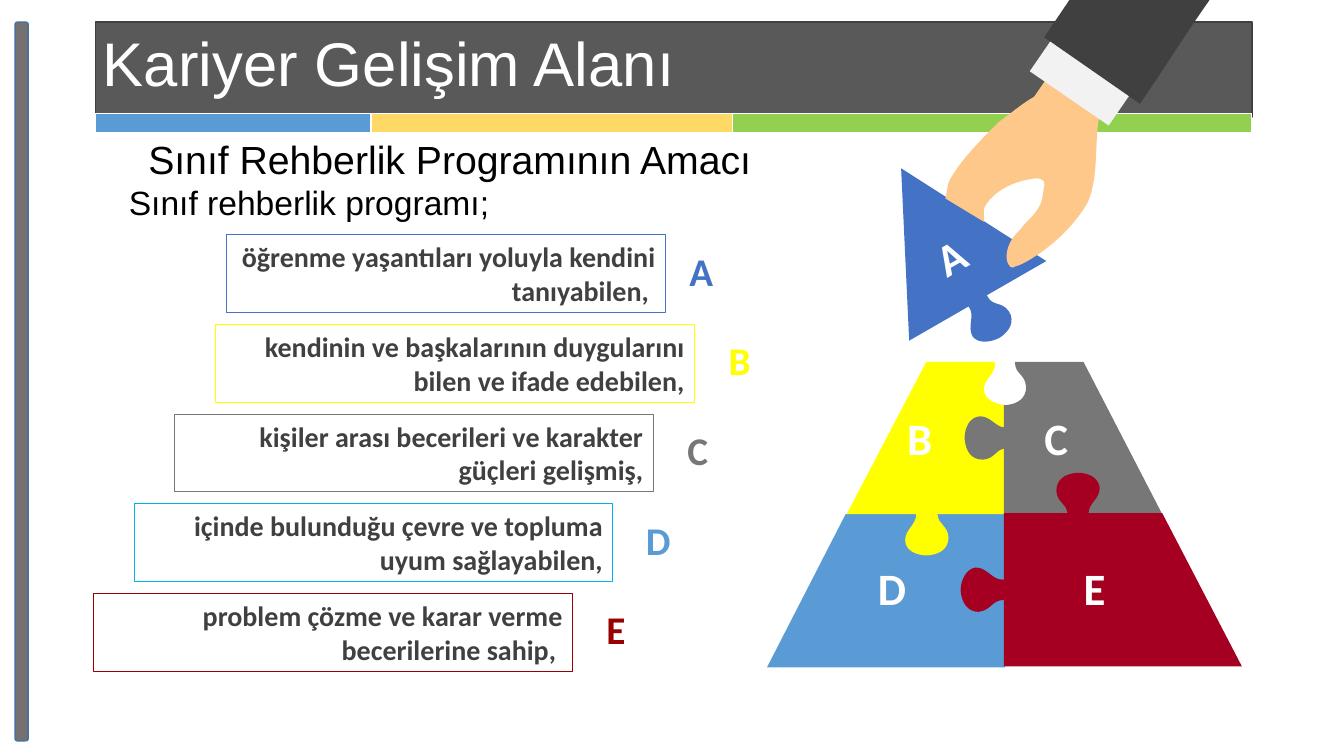
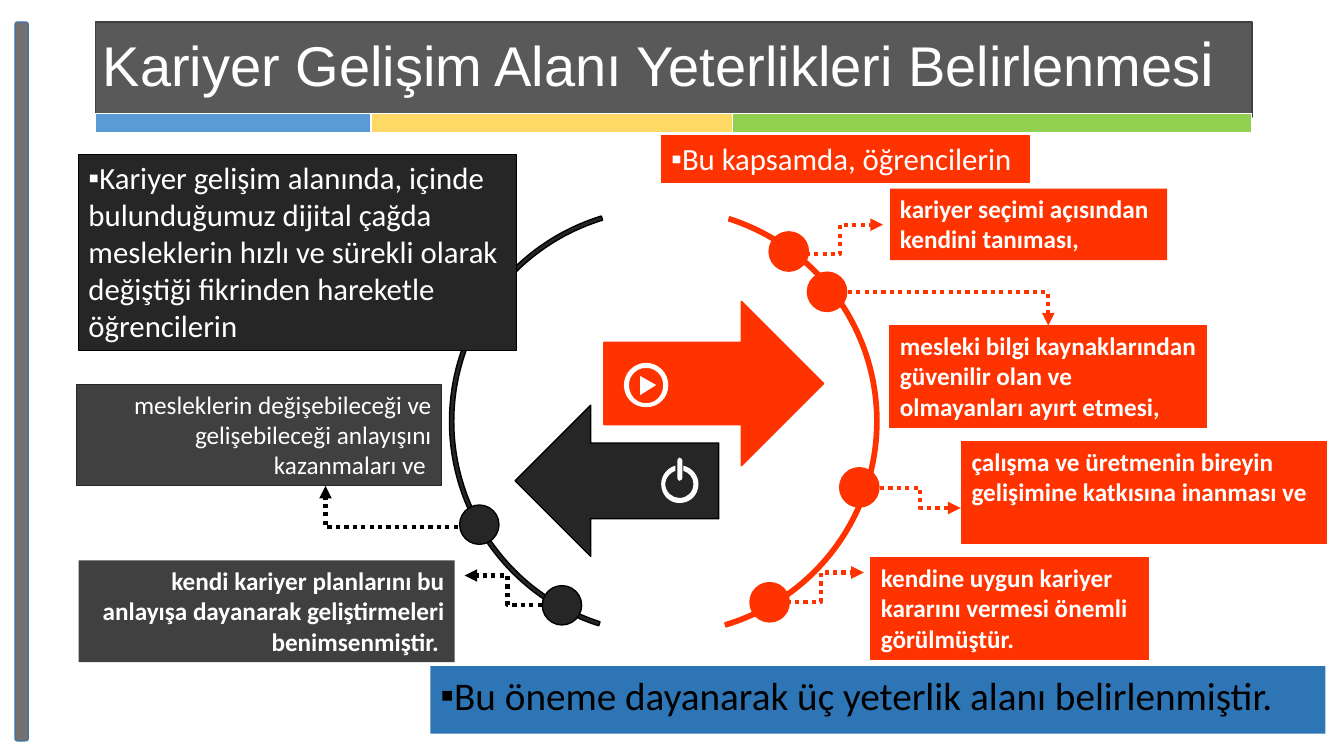
"""Builds two slides on the career development area of a guidance programme."""
from lxml import etree
from pptx import Presentation
from pptx import util as u
from pptx.dml.color import RGBColor
from pptx.enum import dml, shapes, text
from pptx.oxml import ns

WHITE = RGBColor(0xFF, 0xFF, 0xFF)
BLACK = RGBColor(0x00, 0x00, 0x00)
BAND = RGBColor(0x59, 0x59, 0x59)
DARK = RGBColor(0x40, 0x40, 0x40)
INK = RGBColor(0x26, 0x26, 0x26)
SIDEBAR = RGBColor(0x76, 0x71, 0x71)
SIDEBAR_EDGE = RGBColor(0x43, 0x73, 0x9E)
SKY = RGBColor(0x5B, 0x9B, 0xD5)
SAND = RGBColor(0xFF, 0xD9, 0x66)
GREEN = RGBColor(0x92, 0xD0, 0x50)
BLUE = RGBColor(0x44, 0x72, 0xC4)
YELLOW = RGBColor(0xFF, 0xFF, 0x00)
GREY = RGBColor(0x77, 0x77, 0x77)
CYAN = RGBColor(0x00, 0xB0, 0xF0)
MAROON = RGBColor(0x99, 0x00, 0x00)
CRIMSON = RGBColor(0xA5, 0x00, 0x21)
SKIN = RGBColor(0xFE, 0xC8, 0x8A)
CUFF = RGBColor(0xF2, 0xF2, 0xF2)
ORANGE = RGBColor(0xFF, 0x33, 0x00)
OCEAN = RGBColor(0x2E, 0x75, 0xB6)

SHAPE = shapes.MSO_SHAPE
LEFT, CENTER, RIGHT = text.PP_ALIGN.LEFT, text.PP_ALIGN.CENTER, text.PP_ALIGN.RIGHT

STRIPES = [(2.73, SKY), (3.59, SAND), (5.15, GREEN)]

PURPOSES = [
    ("A", "öğrenme yaşantıları yoluyla kendini tanıyabilen, ", 2.25, 4.35, 6.74, BLUE, BLUE),
    ("B", "kendinin ve başkalarının duygularını bilen ve ifade edebilen,", 2.14, 4.75, 7.13, YELLOW, YELLOW),
    ("C", "kişiler arası becerileri ve karakter güçleri gelişmiş,", 1.73, 4.75, 6.72, GREY, GREY),
    ("D", "içinde bulunduğu çevre ve topluma uyum sağlayabilen,", 1.33, 4.75, 6.31, SKY, CYAN),
    ("E", "problem çözme ve karar verme becerilerine sahip, ", 0.93, 4.75, 5.91, MAROON, MAROON),
]

PIECES = [
    (SKY, [(8.39, 5.1), (9.97, 5.1), (9.97, 6.62), (7.61, 6.62)]),
    (BLUE, [(8.94, 1.67), (10.38, 2.59), (9.79, 2.93), (9.85, 3.05, 9.93, 2.98, 10.01, 3.09),
            (10.07, 3.19, 10.02, 3.28, 9.92, 3.35), (9.82, 3.4, 9.71, 3.41, 9.65, 3.34),
            (9.59, 3.23, 9.68, 3.14, 9.61, 3.04), (9.02, 3.38)]),
    (YELLOW, [(9.19, 3.59), (9.87, 3.59), (9.89, 3.71, 9.76, 3.75, 9.76, 3.87),
              (9.77, 3.96, 9.87, 4.01, 9.98, 4.02), (9.98, 5.1), (9.3, 5.1),
              (9.31, 5.21, 9.4, 5.21, 9.41, 5.33), (9.41, 5.44, 9.33, 5.5, 9.2, 5.51),
              (9.09, 5.51, 8.98, 5.46, 8.98, 5.36), (8.98, 5.25, 9.09, 5.21, 9.09, 5.1), (8.4, 5.1)]),
    (GREY, [(10.07, 3.59), (10.75, 3.59), (11.53, 5.1), (9.96, 5.1), (9.96, 4.45),
            (9.87, 4.47, 9.87, 4.55, 9.75, 4.56), (9.64, 4.56, 9.58, 4.48, 9.57, 4.35),
            (9.57, 4.24, 9.62, 4.14, 9.72, 4.13), (9.83, 4.13, 9.87, 4.23, 9.96, 4.24), (9.96, 4.02),
            (9.97, 4.02), (10.1, 4.01, 10.18, 3.95, 10.18, 3.84), (10.17, 3.7, 10.07, 3.72, 10.07, 3.59)]),
    (CRIMSON, [(10.69, 4.69), (10.8, 4.69, 10.9, 4.74, 10.91, 4.84),
               (10.91, 4.95, 10.8, 4.99, 10.8, 5.09), (11.53, 5.09), (12.32, 6.61), (9.96, 6.61),
               (9.96, 5.95), (9.83, 5.96, 9.84, 6.05, 9.71, 6.07), (9.6, 6.07, 9.54, 5.98, 9.53, 5.86),
               (9.53, 5.75, 9.59, 5.64, 9.68, 5.63), (9.8, 5.63, 9.84, 5.76, 9.96, 5.75),
               (9.96, 5.09), (10.59, 5.09), (10.58, 4.99, 10.49, 4.99, 10.48, 4.87),
               (10.48, 4.76, 10.56, 4.7, 10.69, 4.69)]),
]
PIECE_LETTERS = [("A", 9.2, 2.23, 0.47, 330.4), ("B", 8.9, 4.03, 0.45, 0), ("C", 10.26, 4.03, 0.44, 0),
                 ("D", 8.61, 5.51, 0.48, 0), ("E", 10.65, 5.51, 0.42, 0)]
HAND = [(10.61, 0.45), (11.29, 0.7), (11.07, 0.91, 10.96, 0.97, 10.9, 1.19),
        (10.86, 1.42, 10.9, 1.77, 10.79, 2.01), (10.56, 2.41, 10.13, 2.64, 10.08, 2.64),
        (10, 2.72, 9.9, 2.48, 10.12, 2.28), (10.19, 2.18, 10.31, 2.11, 10.34, 1.97),
        (10.35, 1.85, 10.4, 1.79, 10.3, 1.77), (10.2, 1.77, 9.88, 1.83, 9.76, 2.07),
        (9.76, 2.11, 9.76, 2.16, 9.76, 2.2), (9.38, 1.97), (9.39, 1.91, 9.4, 1.86, 9.41, 1.81),
        (9.52, 1.59, 9.77, 1.35, 9.91, 1.21), (10.1, 1.07, 10.14, 1.03, 10.26, 0.96)]
SLEEVE = [(10.61, 0), (12, 0), (11.7, 0.43, 11.61, 0.59, 11.31, 1.03), (10.36, 0.37)]

POWER_ICON = [
    [(6.7, 4.62), (6.7, 4.67), (6.65, 4.69, 6.6, 4.74, 6.6, 4.8),
     (6.6, 4.88, 6.67, 4.94, 6.74, 4.94), (6.82, 4.94, 6.88, 4.88, 6.88, 4.8),
     (6.88, 4.74, 6.84, 4.69, 6.78, 4.67), (6.78, 4.62), (6.87, 4.64, 6.93, 4.72, 6.93, 4.8),
     (6.93, 4.91, 6.85, 4.99, 6.74, 4.99), (6.64, 4.99, 6.56, 4.91, 6.56, 4.8),
     (6.56, 4.72, 6.62, 4.64, 6.7, 4.62)],
    [(6.74, 4.54), (6.76, 4.54, 6.77, 4.56, 6.77, 4.57), (6.77, 4.74),
     (6.77, 4.75, 6.76, 4.77, 6.74, 4.77), (6.73, 4.77, 6.72, 4.75, 6.72, 4.74), (6.72, 4.57),
     (6.72, 4.56, 6.73, 4.54, 6.74, 4.54)],
]
PLAY_ICON = [
    [(6.35, 3.73), (6.51, 3.82), (6.35, 3.92)],
    [(6.41, 3.65), (6.31, 3.65, 6.24, 3.73, 6.24, 3.82), (6.24, 3.92, 6.31, 4, 6.41, 4),
     (6.51, 4, 6.58, 3.92, 6.58, 3.82), (6.58, 3.73, 6.51, 3.65, 6.41, 3.65)],
    [(6.41, 3.6), (6.53, 3.6, 6.63, 3.7, 6.63, 3.82), (6.63, 3.95, 6.53, 4.04, 6.41, 4.04),
     (6.29, 4.04, 6.19, 3.95, 6.19, 3.82), (6.19, 3.7, 6.29, 3.6, 6.41, 3.6)],
]

NOTES = [
    ("kariyer seçimi açısından kendini tanıması,", (8.83, 1.87, 2.75, 0.71), ORANGE, None, LEFT, True),
    ("mesleki bilgi kaynaklarından güvenilir olan ve olmayanları ayırt etmesi,",
     (8.83, 3.23, 3.14, 1.01), ORANGE, ORANGE, LEFT, True),
    ("kendine uygun kariyer kararını vermesi önemli görülmüştür.",
     (8.64, 5.53, 2.75, 1.01), ORANGE, ORANGE, LEFT, True),
    ("çalışma ve üretmenin bireyin gelişimine katkısına inanması ve",
     (9.54, 4.38, 3.62, 1.01), ORANGE, ORANGE, LEFT, True),
    ("mesleklerin değişebileceği ve gelişebileceği anlayışını kazanmaları ve ",
     (0.76, 3.81, 3.62, 1.01), DARK, INK, RIGHT, False),
    ("kendi kariyer planlarını bu anlayışa dayanarak geliştirmeleri benimsenmiştir. ",
     (0.78, 5.56, 3.73, 1.01), DARK, None, RIGHT, True),
]
ELBOWS = [
    ((5.46, 6), (4.61, 5.71), BLACK, False), ((8.41, 2.9), (10.4, 3.23), ORANGE, True),
    ((4.71, 5.23), (3.23, 4.82), BLACK, True), ((7.72, 5.97), (8.57, 5.68), ORANGE, False),
    ((7.91, 2.52), (8.76, 2.23), ORANGE, False), ((8.73, 4.84), (9.53, 5.04), ORANGE, False),
]
DOTS = [(7.63, 2.3, ORANGE, ORANGE), (8.01, 2.7, ORANGE, ORANGE), (7.44, 5.78, ORANGE, ORANGE),
        (8.33, 4.64, ORANGE, ORANGE), (5.38, 5.81, INK, BLACK), (4.56, 5.01, INK, BLACK)]
STATEMENTS = [
    ("Kariyer gelişim alanında, içinde bulunduğumuz dijital çağda mesleklerin hızlı ve sürekli olarak "
     "değiştiği fikrinden hareketle öğrencilerin", (0.78, 1.53, 4.34, 1.95), INK, BLACK, 22, WHITE),
    ("Bu kapsamda, öğrencilerin", (6.56, 1.34, 3.65, 0.47), ORANGE, ORANGE, 22, WHITE),
    ("Bu öneme dayanarak üç yeterlik alanı belirlenmiştir.", (4.27, 6.61, 8.88, 0.67), OCEAN, None, 28, BLACK),
]


def inches(values):
    """Converts a run of numbers to lengths."""
    return [u.Inches(value) for value in values]


def add_node(parent, tag, **attributes):
    """Appends one drawing element with its attributes."""
    node = etree.SubElement(parent, ns.qn(tag))
    for name, value in attributes.items():
        node.set(name, value)
    return node


def paint(shape, fill, line=None, width=1):
    """Sets fill and outline and removes the shadow."""
    shape.shadow.inherit = False
    if fill is None:
        shape.fill.background()
    else:
        shape.fill.solid()
        shape.fill.fore_color.rgb = fill
    if line is None:
        shape.line.fill.background()
    else:
        shape.line.color.rgb = line
        shape.line.width = u.Pt(width)
    return shape


def add_preset(page, kind, frame, fill, line=None, width=1, rotation=0, adjust=()):
    """Adds a preset shape."""
    shape = paint(page.shapes.add_shape(kind, *inches(frame)), fill, line, width)
    shape.rotation = rotation
    for index, value in enumerate(adjust):
        shape.adjustments[index] = value
    return shape


def add_run(para, words, size, color, bold=False, font="Calibri"):
    """Adds one formatted run."""
    span = para.add_run()
    span.text = words
    span.font.size = u.Pt(size)
    span.font.color.rgb = color
    span.font.bold = bold
    span.font.name = font


def open_frame(box, align=LEFT):
    """Prepares a wrapping, top-anchored frame and returns its first paragraph."""
    frame = box.text_frame
    frame.word_wrap = True
    frame.vertical_anchor = text.MSO_ANCHOR.TOP
    para = frame.paragraphs[0]
    para.alignment = align
    return para


def add_letter(page, letter, frame, size, color, rotation=0):
    """Adds a bold letter in a text box."""
    box = page.shapes.add_textbox(*inches(frame))
    box.rotation = rotation
    add_run(open_frame(box, CENTER), letter, size, color, True)


def add_panel(page, words, frame, fill, line, size, color, align=LEFT, bold=False, bullet=False):
    """Adds a rectangle holding one paragraph."""
    box = add_preset(page, SHAPE.RECTANGLE, frame, fill, line, 0.75)
    para = open_frame(box, align)
    if bullet:
        properties = para._p.get_or_add_pPr()
        add_node(properties, "a:buFont", typeface="Arial")
        add_node(properties, "a:buChar", char="▪")
    add_run(para, words, size, color, bold)


def add_outline(page, fill, *contours):
    """Adds a freeform whose six-number steps are cubic curves."""
    builder = page.shapes.build_freeform(*inches(contours[0][0]))
    for index, contour in enumerate(contours):
        if index:
            builder.move_to(*inches(contour[0]))
        points = [inches(step[at:at + 2]) for step in contour[1:] for at in range(0, len(step), 2)]
        builder.add_line_segments(points, close=True)
    shape = paint(builder.convert_to_shape(), fill)
    lines = iter(list(shape._element.iter(ns.qn("a:lnTo"))))
    for step in (step for contour in contours for step in contour[1:]):
        first, *others = [next(lines) for _ in range(len(step) // 2)]
        if others:
            first.tag = ns.qn("a:cubicBezTo")
        for other in others:
            first.append(other[0])
            other.getparent().remove(other)


def add_elbow(page, start, end, color, single_bend):
    """Adds a dotted elbow arrow with one or two bends."""
    arrow = page.shapes.add_connector(shapes.MSO_CONNECTOR.ELBOW, *inches(start + end))
    arrow.line.color.rgb = color
    arrow.line.width = u.Pt(3)
    arrow.line.dash_style = dml.MSO_LINE.ROUND_DOT
    properties = arrow._element.spPr
    if single_bend:
        properties.find(ns.qn("a:prstGeom")).set("prst", "bentConnector2")
    add_node(properties.find(ns.qn("a:ln")), "a:tailEnd", type="triangle")
    add_node(properties, "a:effectLst")


def add_stripes(page):
    """Adds the three-coloured strip under the title band."""
    total = sum(width for width, _ in STRIPES)
    table = page.shapes.add_table(1, len(STRIPES), *inches((0.95, 1.13, total, 0.2))).table
    table.first_row = table.horz_banding = False
    table.rows[0].height = u.Inches(0.2)
    for index, (width, color) in enumerate(STRIPES):
        table.columns[index].width = u.Inches(width)
        cell = table.cell(0, index)
        cell.margin_top = cell.margin_bottom = 0
        cell.text_frame.paragraphs[0]._p.get_or_add_endParaRPr().set("sz", "800")
        for side, points in (("L", 1), ("R", 1), ("T", 1), ("B", 3)):
            border = add_node(cell._tc.get_or_add_tcPr(), f"a:ln{side}", w=str(u.Pt(points)))
            add_node(add_node(border, "a:solidFill"), "a:srgbClr", val=str(WHITE))
        cell.fill.solid()
        cell.fill.fore_color.rgb = color


def add_page(deck, title_runs):
    """Adds a slide with the shared band, strip, side bar and title."""
    page = deck.slides.add_slide(deck.slide_layouts[5])
    add_preset(page, SHAPE.RECTANGLE, (0.95, 0.22, 11.47, 0.94), BAND, DARK)
    add_stripes(page)
    add_preset(page, SHAPE.ROUNDED_RECTANGLE, (0.15, 0.22, 0.13, 7.13), SIDEBAR, SIDEBAR_EDGE)
    title = page.shapes.title
    title.left, title.top, title.width, title.height = inches((0.92, 0.28, 11.5, 0.95))
    para = open_frame(title)
    para.line_spacing = 0.9
    for words, size in title_runs:
        add_run(para, words, size, WHITE, font="Arial")
    page.shapes.element.append(title.element)
    return page


def build_purpose(deck):
    """Builds the slide with the purposes and the puzzle pyramid."""
    page = add_page(deck, [("Kariyer Gelişim Alanı", 44)])
    for row, (letter, words, left, width, letter_left, color, edge) in enumerate(PURPOSES):
        top = 2.33 + 0.89 * row
        add_panel(page, words, (left, top, width, 0.77), None, edge, 20, DARK, RIGHT, True)
        add_letter(page, letter, (letter_left, top + 0.07, 0.4, 0.57), 28, color)
    for color, outline in PIECES:
        add_outline(page, color, outline)
    for letter, left, top, width, rotation in PIECE_LETTERS:
        add_letter(page, letter, (left, top, width, 0.64), 32, WHITE, rotation)
    add_outline(page, SKIN, HAND)
    add_preset(page, SHAPE.RECTANGLE, (10.24, 0.63, 0.95, 0.38), CUFF, rotation=34.5)
    add_outline(page, DARK, SLEEVE)
    box = page.shapes.add_textbox(*inches((1.18, 1.29, 6.67, 0.98)))
    add_run(open_frame(box, CENTER), "Sınıf Rehberlik Programının Amacı ", 28, BLACK, font="Arial")
    add_run(box.text_frame.add_paragraph(), "Sınıf rehberlik programı;", 24, BLACK, font="Arial")


def build_competences(deck):
    """Builds the slide with the two arcs, arrows and notes."""
    page = add_page(deck, [("Kariyer Gelişim Alanı Yeterlikleri Belirlenmes", 40), ("i", 44)])
    add_preset(page, SHAPE.RIGHT_ARROW, (5.11, 4.02, 2.02, 1.5), INK, BLACK, rotation=180)
    add_preset(page, SHAPE.RIGHT_ARROW, (5.99, 2.99, 2.18, 1.63), ORANGE, ORANGE)
    for fill, line, rotation, end in ((ORANGE, ORANGE, 90, 205.97), (INK, BLACK, 270, 205.79)):
        add_preset(page, SHAPE.BLOCK_ARC, (4.46, 2.05, 4.26, 4.26), fill, line, 1, rotation,
                   (118.65, end, 0.01))
    for words, frame, fill, line, align, bold in NOTES:
        add_panel(page, words, frame, fill, line, 18, WHITE, align, bold)
    for elbow in ELBOWS:
        add_elbow(page, *elbow)
    for left, top, fill, line in DOTS:
        add_preset(page, SHAPE.OVAL, (left, top, 0.39, 0.39), fill, line)
    for icon in (POWER_ICON, PLAY_ICON):
        add_outline(page, WHITE, *icon)
    for words, frame, fill, line, size, color in STATEMENTS:
        add_panel(page, words, frame, fill, line, size, color, bullet=True)


def main():
    """Builds and saves the deck."""
    deck = Presentation()
    deck.slide_width, deck.slide_height = inches((40 / 3, 7.5))
    build_purpose(deck)
    build_competences(deck)
    deck.save("out.pptx")


if __name__ == "__main__":
    main()
